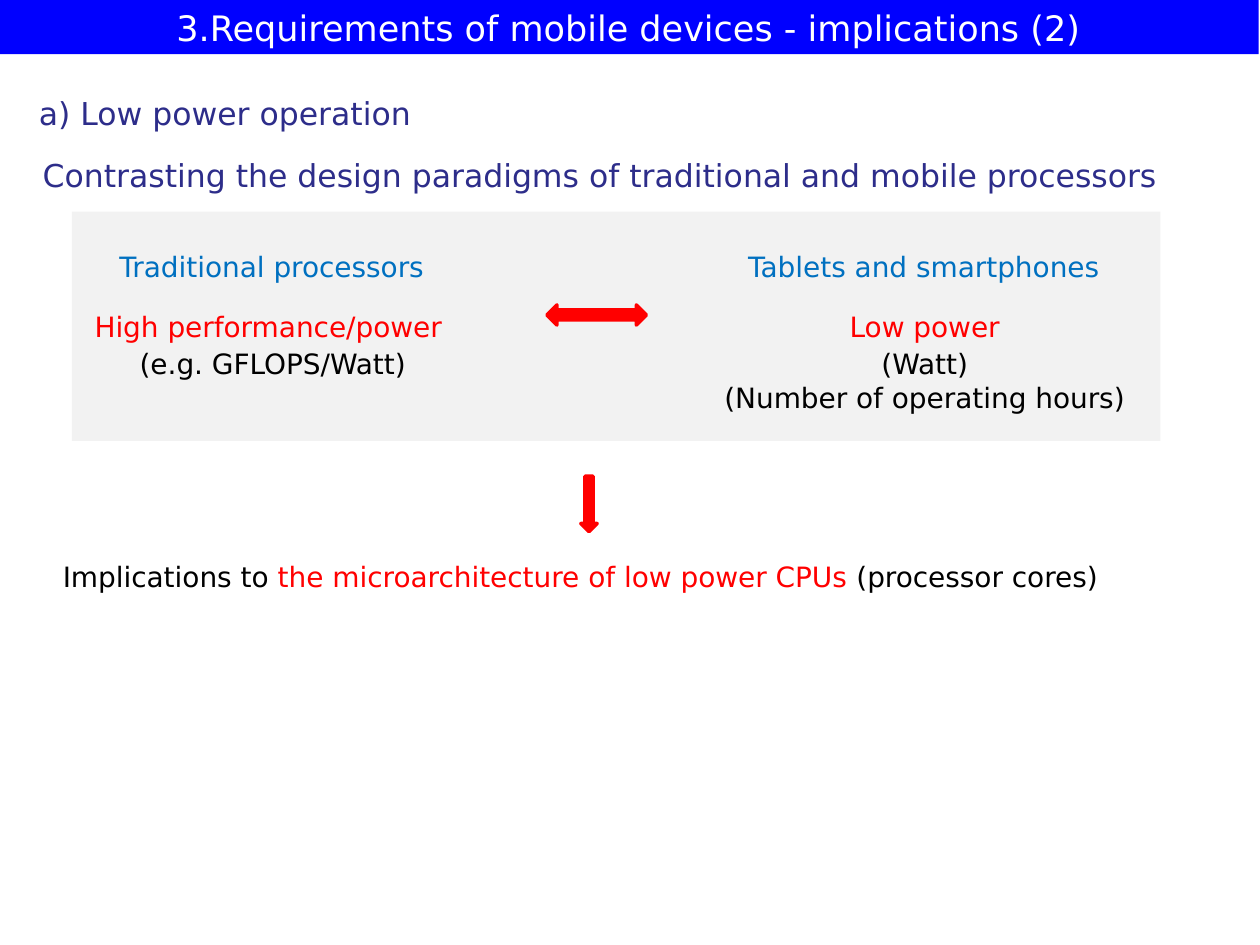
from pptx import Presentation
from pptx.dml.color import RGBColor
from pptx.enum.shapes import MSO_SHAPE as Preset
from pptx.enum.text import MSO_ANCHOR as Anchor, MSO_AUTO_SIZE as AutoSize, PP_ALIGN as Align
from pptx.util import Inches, Pt

FONT = "DejaVu Sans"
COLORS = {
    "banner": "0000FF",
    "title": "FFFFFF",
    "heading": "2D2D8A",
    "panel": "F2F2F2",
    "label": "0070C0",
    "accent": "FF0000",
    "body": "000000",
}


def rgb(name):
    return RGBColor.from_string(COLORS[name])


def write(frame, paragraphs, size, align=Align.LEFT, first_gap=0):
    """Fill a frame; each paragraph is a list of (text, color name) runs."""
    for i, runs in enumerate(paragraphs):
        para = frame.paragraphs[0] if i == 0 else frame.add_paragraph()
        para.alignment = align
        if i == 0 and first_gap:
            para.space_after = Pt(first_gap)
        for text, color in runs:
            run = para.add_run()
            run.text = text
            run.font.color.rgb = rgb(color)
            for key, value in {"name": FONT, "size": Pt(size)}.items():
                setattr(run.font, key, value)


def add_text(slide, box, paragraphs, size=16, **style):
    frame = slide.shapes.add_textbox(*map(Inches, box)).text_frame
    for key, value in {"word_wrap": False, "auto_size": AutoSize.SHAPE_TO_FIT_TEXT}.items():
        setattr(frame, key, value)
    write(frame, paragraphs, size, **style)


def add_filled(slide, preset, box, color, line_width=0):
    shape = slide.shapes.add_shape(preset, *map(Inches, box))
    shape.shadow.inherit = False
    shape.fill.solid()
    shape.fill.fore_color.rgb = rgb(color)
    if line_width:
        shape.line.color.rgb = rgb(color)
        shape.line.width = Pt(line_width)
    else:
        shape.line.fill.background()
    return shape


def add_banner(slide, box, title):
    frame = add_filled(slide, Preset.RECTANGLE, box, "banner").text_frame
    for key, value in {"word_wrap": True, "vertical_anchor": Anchor.MIDDLE}.items():
        setattr(frame, key, value)
    write(frame, [[(title, "title")]], 20, Align.CENTER)


def add_headings(slide, left, top):
    add_text(slide, (left, top, 3.21, 0.4), [[("a) Low power operation", "heading")]], 18)
    contrast = "Contrasting the design paradigms of traditional and mobile processors"
    add_text(slide, (left + 0.03, top + 0.49, 9.22, 0.4), [[(contrast, "heading")]], 18)


def add_comparison(slide, box):
    left, top, _, _ = box
    add_filled(slide, Preset.RECTANGLE, box, "panel")
    # (label, label offset and width, goal, measures, goal offset, width and height)
    sides = [
        ("Traditional processors", 0.28, 2.66,
         "High performance/power ", ["(e.g. GFLOPS/Watt)"], 0.05, 3.09, 0.67),
        ("Tablets and smartphones", 5.27, 3.03,
         "Low power", ["(Watt)", "(Number of operating hours)"], 5.04, 3.46, 0.94),
    ]
    for label, label_x, label_w, goal, measures, goal_x, goal_w, goal_h in sides:
        add_text(slide, (left + label_x, top + 0.25, label_w, 0.37), [[(label, "label")]])
        lines = [[(goal, "accent")]] + [[(measure, "body")] for measure in measures]
        add_text(slide, (left + goal_x, top + 0.73, goal_w, goal_h), lines,
                 align=Align.CENTER, first_gap=2)
    add_filled(slide, Preset.LEFT_RIGHT_ARROW, (left + 3.77, top + 0.74, 0.79, 0.16), "accent", 2)


def add_conclusion(slide, left, top):
    add_filled(slide, Preset.DOWN_ARROW, (left + 4.21, top, 0.13, 0.44), "accent", 2)
    add_text(slide, (left, top + 0.61, 8.53, 0.37), [[
        ("Implications to ", "body"),
        ("the microarchitecture of low power CPUs ", "accent"),
        ("(processor cores)", "body"),
    ]])


def main():
    deck = Presentation()
    deck.slide_width, deck.slide_height = Inches(10), Inches(7.5)
    slide = deck.slides.add_slide(deck.slide_layouts[6])

    add_headings(slide, 0.21, 0.7)
    add_comparison(slide, (0.57, 1.68, 8.64, 1.82))
    add_conclusion(slide, 0.4, 3.78)
    add_banner(slide, (-0.01, 0, 10, 0.43), "3.Requirements of mobile devices - implications (2)")

    deck.save("out.pptx")


if __name__ == "__main__":
    main()
